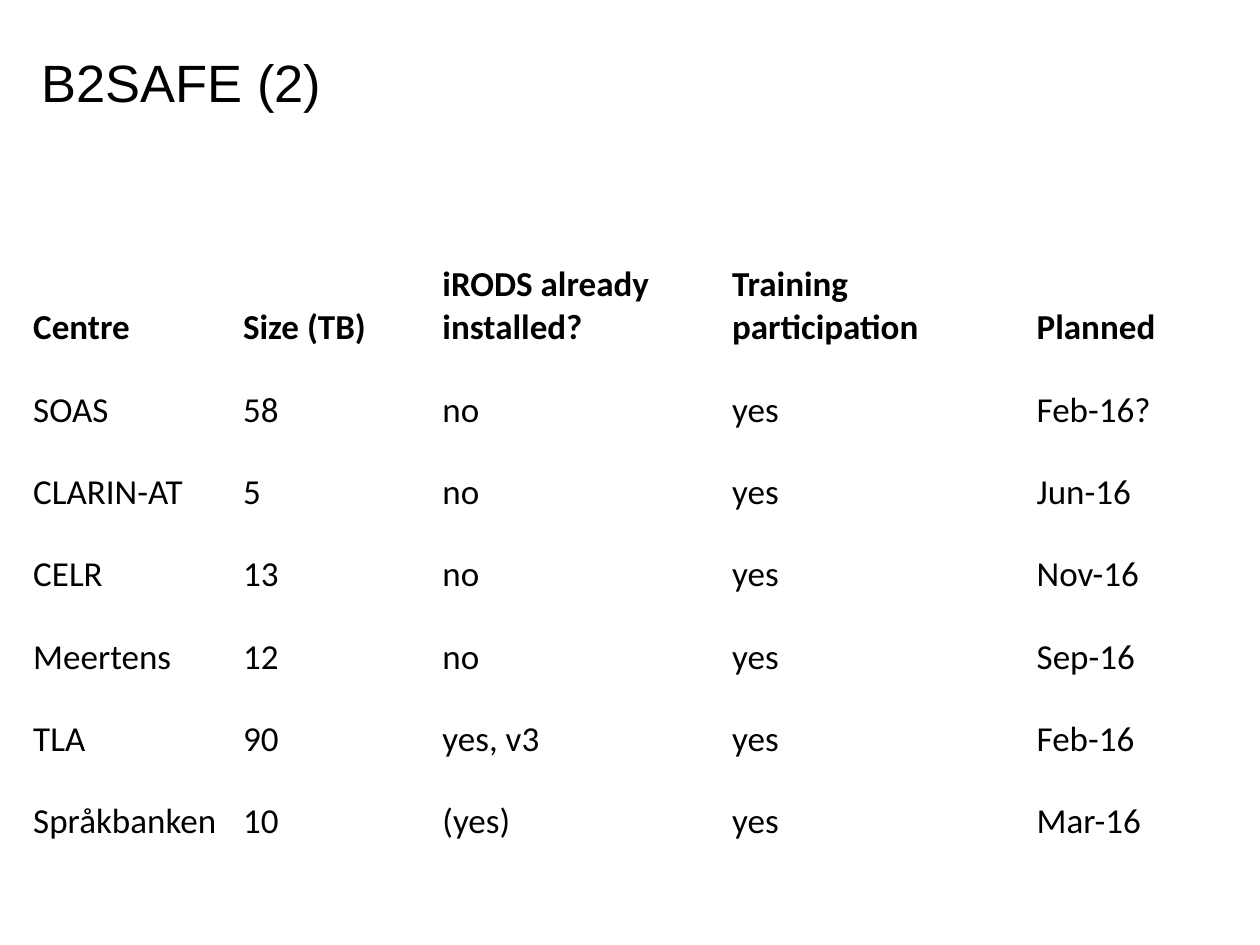
"""Build the B2SAFE slide with its table of centres."""
from dataclasses import dataclass

from pptx import Presentation
from pptx.dml.color import RGBColor
from pptx.enum.text import MSO_ANCHOR as Anchor, PP_ALIGN as Align
from pptx.slide import Slide
from pptx.table import _Cell as Cell
from pptx.text.text import _Paragraph as Paragraph
from pptx.util import Cm, Pt

BLACK = RGBColor(0, 0, 0)
ROW_HEIGHT = Cm(1.66)
INSET = Cm(0.03)


@dataclass(frozen=True)
class Column:
    header: str
    width: float


@dataclass(frozen=True)
class Centre:
    name: str
    size: str
    irods: str
    training: str
    planned: str

    def values(self) -> tuple[str, ...]:
        return self.name, self.size, self.irods, self.training, self.planned


COLUMNS = [
    Column("Centre", 4.23),
    Column("Size (TB)", 4.02),
    Column("iRODS already installed?", 5.84),
    Column("Training participation", 6.14),
    Column("Planned", 3.47),
]
CENTRES = [
    Centre("SOAS", "58", "no", "yes", "Feb-16?"),
    Centre("CLARIN-AT", "5", "no", "yes", "Jun-16"),
    Centre("CELR", "13", "no", "yes", "Nov-16"),
    Centre("Meertens", "12", "no", "yes", "Sep-16"),
    Centre("TLA", "90", "yes, v3", "yes", "Feb-16"),
    Centre("Språkbanken", "10", "(yes)", "yes", "Mar-16"),
]


def add_run(p: Paragraph, text: str, font: str, size: int, bold: bool = False) -> None:
    p.alignment = Align.LEFT
    r = p.add_run()
    r.text = text
    r.font.name = font
    r.font.size = Pt(size)
    r.font.bold = bold
    r.font.color.rgb = BLACK


def fill_cell(cell: Cell, text: str, bold: bool) -> None:
    cell.fill.background()
    cell.vertical_anchor = Anchor.BOTTOM
    cell.margin_left = cell.margin_right = cell.margin_top = INSET
    cell.margin_bottom = 0
    add_run(cell.text_frame.paragraphs[0], text, "Calibri", 20, bold)


def add_title(s: Slide, text: str) -> None:
    sp = s.shapes.title
    sp.left, sp.top, sp.width, sp.height = Cm(0.84), Cm(0.53), Cm(16.08), Cm(2.24)
    tf = sp.text_frame
    tf.margin_left = 0
    tf.vertical_anchor = Anchor.MIDDLE
    add_run(tf.paragraphs[0], text, "Arial", 30)


def add_centres(s: Slide) -> None:
    rows = [tuple(c.header for c in COLUMNS)] + [c.values() for c in CENTRES]
    width = Cm(sum(c.width for c in COLUMNS))
    table = s.shapes.add_table(
        len(rows), len(COLUMNS), Cm(0.64), Cm(5.28), width, ROW_HEIGHT * len(rows)
    ).table
    table.first_row = table.horz_banding = False
    for col, column in zip(table.columns, COLUMNS):
        col.width = Cm(column.width)
    for i, values in enumerate(rows):
        table.rows[i].height = ROW_HEIGHT
        for j, text in enumerate(values):
            fill_cell(table.cell(i, j), text, bold=i == 0)


def main() -> None:
    prs = Presentation()
    prs.slide_width, prs.slide_height = Cm(25.4), Cm(19.05)
    s = prs.slides.add_slide(prs.slide_layouts[5])
    add_title(s, "B2SAFE (2)")
    add_centres(s)
    prs.save("out.pptx")


if __name__ == "__main__":
    main()
